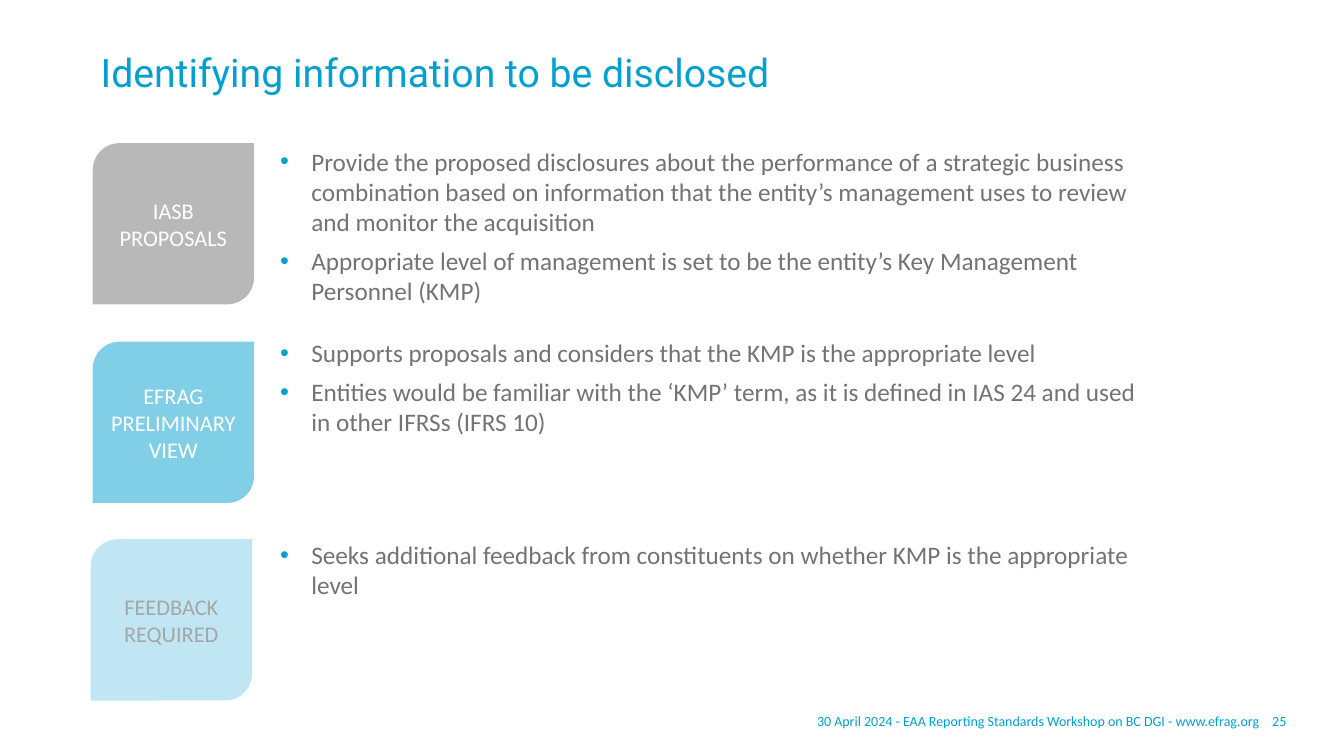
from dataclasses import dataclass

from lxml.etree import SubElement
from pptx import Presentation
from pptx.dml.color import RGBColor
from pptx.enum.shapes import MSO_SHAPE as Preset
from pptx.enum.text import MSO_ANCHOR as Anchor, PP_ALIGN as Align
from pptx.oxml.ns import qn
from pptx.util import Inches, Pt


@dataclass(frozen=True)
class Theme:
    blue: str = "02A0CE"
    pale_blue: str = "80CFE6"
    gray: str = "737374"
    light_gray: str = "A6A6A6"
    white: str = "FFFFFF"
    heading_font: str = "Roboto"
    body_font: str = "Calibri"
    title_size: int = 28
    body_size: int = 18
    label_size: int = 16
    footer_size: int = 10


class SlideBuilder:
    def __init__(self, presentation, theme):
        self.theme = theme
        self.slide = presentation.slides.add_slide(presentation.slide_layouts[6])

    def style(self, paragraph, size, color, font=None):
        paragraph.font.size = Pt(size)
        paragraph.font.name = font or self.theme.body_font
        paragraph.font.color.rgb = RGBColor.from_string(color)

    def text_box(self, left, top, width, height, text, anchor=Anchor.MIDDLE):
        shape = self.slide.shapes.add_textbox(
            Inches(left), Inches(top), Inches(width), Inches(height))
        text_frame = shape.text_frame
        text_frame.word_wrap = True
        text_frame.vertical_anchor = anchor
        text_frame.text = text
        return text_frame.paragraphs

    def title(self, text):
        paragraph = self.text_box(0.9, 0.42, 11.5, 0.65, text)[0]
        paragraph.line_spacing = 0.9
        self.style(paragraph, self.theme.title_size, self.theme.blue, self.theme.heading_font)

    def label(self, left, top, text, fill, color):
        side = Inches(1.6)
        shape = self.slide.shapes.add_shape(
            Preset.ROUND_2_DIAG_RECTANGLE, Inches(left), Inches(top), side, side)
        shape.shadow.inherit = False
        shape.line.fill.background()
        shape.fill.solid()
        shape.fill.fore_color.rgb = RGBColor.from_string(fill)
        fill_color = shape.fill._xPr.find(qn("a:solidFill"))[0]
        SubElement(fill_color, qn("a:alpha"), val="50000")
        text_frame = shape.text_frame
        text_frame.margin_left = text_frame.margin_right = Inches(0.05)
        text_frame.word_wrap = True
        text_frame.vertical_anchor = Anchor.MIDDLE
        text_frame.text = text
        for paragraph in text_frame.paragraphs:
            paragraph.alignment = Align.CENTER
            self.style(paragraph, self.theme.label_size, color)

    def bullets(self, top, height, items):
        paragraphs = self.text_box(2.68, top, 8.85, height, "\n".join(items), Anchor.TOP)
        indent = Inches(0.31)
        for index, paragraph in enumerate(paragraphs):
            paragraph.space_before = Pt(3 if index else 0)
            paragraph.space_after = Pt(3)
            properties = paragraph._p.get_or_add_pPr()
            properties.set("marL", str(indent))
            properties.set("indent", str(-indent))
            bullet_color = SubElement(properties, qn("a:buClr"))
            SubElement(bullet_color, qn("a:srgbClr"), val=self.theme.blue)
            SubElement(properties, qn("a:buFont"), typeface="Arial")
            SubElement(properties, qn("a:buChar"), char="•")
            self.style(paragraph, self.theme.body_size, self.theme.gray)

    def footer(self, text, number):
        paragraph = self.text_box(6.5, 6.95, 6.36, 0.4, f"\t{text}\t{number}")[0]
        tabs = SubElement(paragraph._p.get_or_add_pPr(), qn("a:tabLst"))
        for position, alignment in ((5.89, "r"), (6.02, "l")):
            SubElement(tabs, qn("a:tab"), pos=str(Inches(position)), algn=alignment)
        self.style(paragraph, self.theme.footer_size, self.theme.blue)


def main():
    presentation = Presentation()
    presentation.slide_width = Inches(13.33)
    presentation.slide_height = Inches(7.5)
    theme = Theme()
    builder = SlideBuilder(presentation, theme)

    builder.footer("30 April 2024 - EAA Reporting Standards Workshop on BC DGI - www.efrag.org", 25)
    builder.title("Identifying information to be disclosed")

    sections = [
        (0.92, 1.42, "IASB PROPOSALS", theme.gray, theme.white, 1.4, 1.7, [
            "Provide the proposed disclosures about the performance of a strategic business "
            "combination based on information that the entity’s management uses to review "
            "and monitor the acquisition",
            "Appropriate level of management is set to be the entity’s Key Management "
            "Personnel (KMP)",
        ]),
        (0.92, 3.39, "EFRAG PRELIMINARY\nVIEW", theme.blue, theme.white, 3.3, 1.09, [
            "Supports proposals and considers that the KMP is the appropriate level",
            "Entities would be familiar with the ‘KMP’ term, as it is defined in IAS 24 "
            "and used in other IFRSs (IFRS 10)",
        ]),
        (0.9, 5.35, "FEEDBACK REQUIRED", theme.pale_blue, theme.light_gray, 5.3, 0.71, [
            "Seeks additional feedback from constituents on whether KMP is the appropriate "
            "level",
        ]),
    ]
    for left, label_top, label, fill, color, text_top, height, items in sections:
        builder.label(left, label_top, label, fill, color)
        builder.bullets(text_top, height, items)

    presentation.save("out.pptx")


if __name__ == "__main__":
    main()
